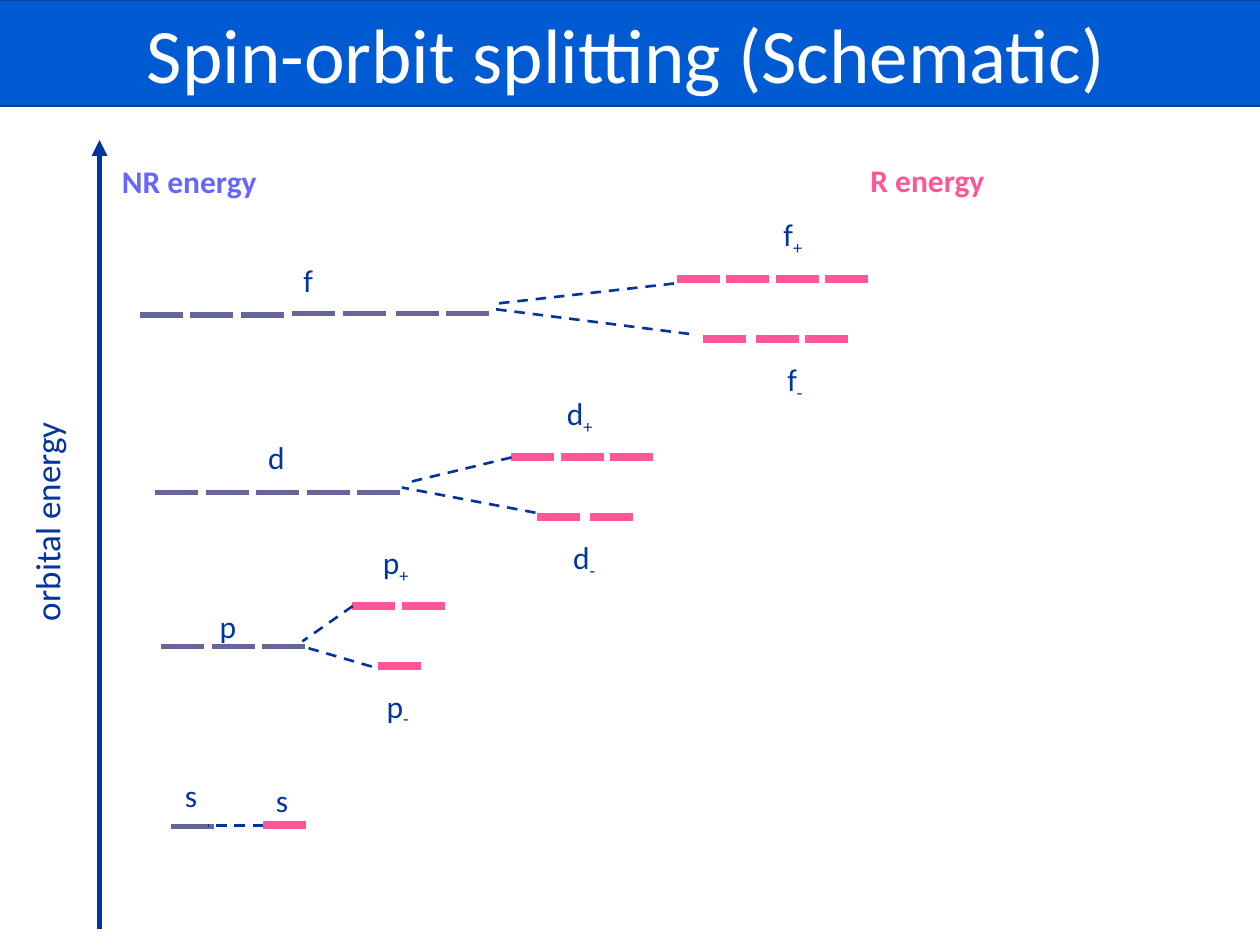
from lxml.etree import SubElement
from pptx import Presentation
from pptx.dml.color import RGBColor
from pptx.enum.dml import MSO_LINE
from pptx.enum.shapes import MSO_CONNECTOR
from pptx.enum.text import MSO_ANCHOR, MSO_AUTO_SIZE, PP_ALIGN
from pptx.oxml.ns import qn
from pptx.util import Pt

COLORS = {
    "banner": "005BD3", "banner edge": "00439C", "title": "FFFFFF",
    "ink": "00349E", "NR level": "666699", "NR heading": "6666FF", "R": "FF5698",
}
FONT = "Calibri"

deck = Presentation()
deck.slide_width, deck.slide_height = Pt(720), Pt(540)
slide = deck.slides.add_slide(deck.slide_layouts[5])


def add_line(x1, y1, x2, y2, color, width):
    line = slide.shapes.add_connector(MSO_CONNECTOR.STRAIGHT, Pt(x1), Pt(y1), Pt(x2), Pt(y2))
    line.line.color.rgb = RGBColor.from_string(COLORS[color])
    line.line.width = Pt(width)
    SubElement(line._element.spPr, qn("a:effectLst"))
    return line


def add_label(text, left, top, width, height=29, color="ink", size=18, bold=None, subscript=""):
    box = slide.shapes.add_textbox(Pt(left), Pt(top), Pt(width), Pt(height))
    box.text_frame.word_wrap = False
    box.text_frame.auto_size = MSO_AUTO_SIZE.SHAPE_TO_FIT_TEXT
    para = box.text_frame.paragraphs[0]
    for part in filter(None, (text, subscript)):
        span = para.add_run()
        span.text = part
        span.font.name, span.font.size, span.font.bold = FONT, Pt(size), bold
        span.font.color.rgb = RGBColor.from_string(COLORS[color])
    if subscript:
        span.font._element.set("baseline", "-25000")
    return box


# Title banner
title = slide.shapes.title
title.left, title.top, title.width, title.height = Pt(-8), Pt(0), Pt(732), Pt(60.5)
title.fill.solid()
title.fill.fore_color.rgb = RGBColor.from_string(COLORS["banner"])
title.line.color.rgb = RGBColor.from_string(COLORS["banner edge"])
title.line.width = Pt(1.25)
title.text_frame.auto_size = MSO_AUTO_SIZE.NONE
title.text_frame.vertical_anchor = MSO_ANCHOR.MIDDLE
para = title.text_frame.paragraphs[0]
para.alignment = PP_ALIGN.CENTER
span = para.add_run()
span.text = "Spin-orbit splitting (Schematic)"
span.font.name, span.font.size = FONT, Pt(44)
span.font.color.rgb = RGBColor.from_string(COLORS["title"])

# Energy axis and headings
axis = add_line(56.9, 530.6, 56.9, 80, "ink", 3)
SubElement(axis.line._get_or_add_ln(), qn("a:tailEnd"), type="triangle")
axis_label = add_label(" orbital energy", -40.3, 283.7, 134, 31.5, size=20)
axis_label.rotation = 270
add_label("NR energy", 62.6, 89.3, 266, color="NR heading", bold=True).text_frame.word_wrap = True
add_label("R energy", 490.3, 88.6, 80, color="R", bold=True)

# Level groups: left, y, number of dashes
DASH = 24.6
nonrelativistic = [
    (97.5, 472.3, 1),
    (92.2, 369.4, 3),
    (88.8, 281.5, 5),
    (79.9, 180, 3), (167, 179.3, 2), (226.3, 179.3, 2),
]
relativistic = [
    (150.5, 471.6, 1),
    (201.4, 346.3, 2), (216.2, 380.7, 1),
    (292.2, 261.4, 3), (306.9, 295.4, 1), (337.4, 295.4, 1),
    (386.7, 159.6, 4), (401.8, 193.5, 1), (431.8, 193.5, 2),
]
for groups, color, pitch, width in (
    (nonrelativistic, "NR level", 28.8, 3),
    (relativistic, "R", 28.3, 4.5),
):
    for left, y, count in groups:
        for index in range(count):
            x = left + index * pitch
            add_line(x, y, x + DASH, y, color, width)

# Dashed links from each level to its split levels
for link in [
    (150.5, 471.6, 118.8, 471.6),
    (201.6, 346.3, 172.8, 366.5), (212.4, 380.9, 172.8, 369.4),
    (292.3, 261.4, 232.6, 275.8), (306, 293, 229.7, 278.6),
    (385.2, 162, 283.7, 173.5), (393.8, 190.8, 280.8, 176.4),
]:
    add_line(*link, "ink", 1.5).line.dash_style = MSO_LINE.DASH

# Orbital names: text, subscript, left, top, width
for orbital, sign, left, top, width in [
    ("s", "", 98.6, 439.9, 24), ("s", "", 150.5, 442.8, 24),
    ("p", "", 118.4, 343.4, 24.5), ("p", "+", 211.7, 306.7, 31.5), ("p", "-", 213.8, 388.8, 29),
    ("d", "", 146.2, 247, 24.5), ("d", "+", 316.8, 221.8, 31.5), ("d", "-", 320.4, 303.8, 29),
    ("f", "", 166.3, 145.4, 19.5), ("f", "+", 440.6, 119.5, 26.5), ("f", "-", 442.8, 202.3, 24),
]:
    add_label(orbital, left, top, width, subscript=sign)

deck.save("out.pptx")
